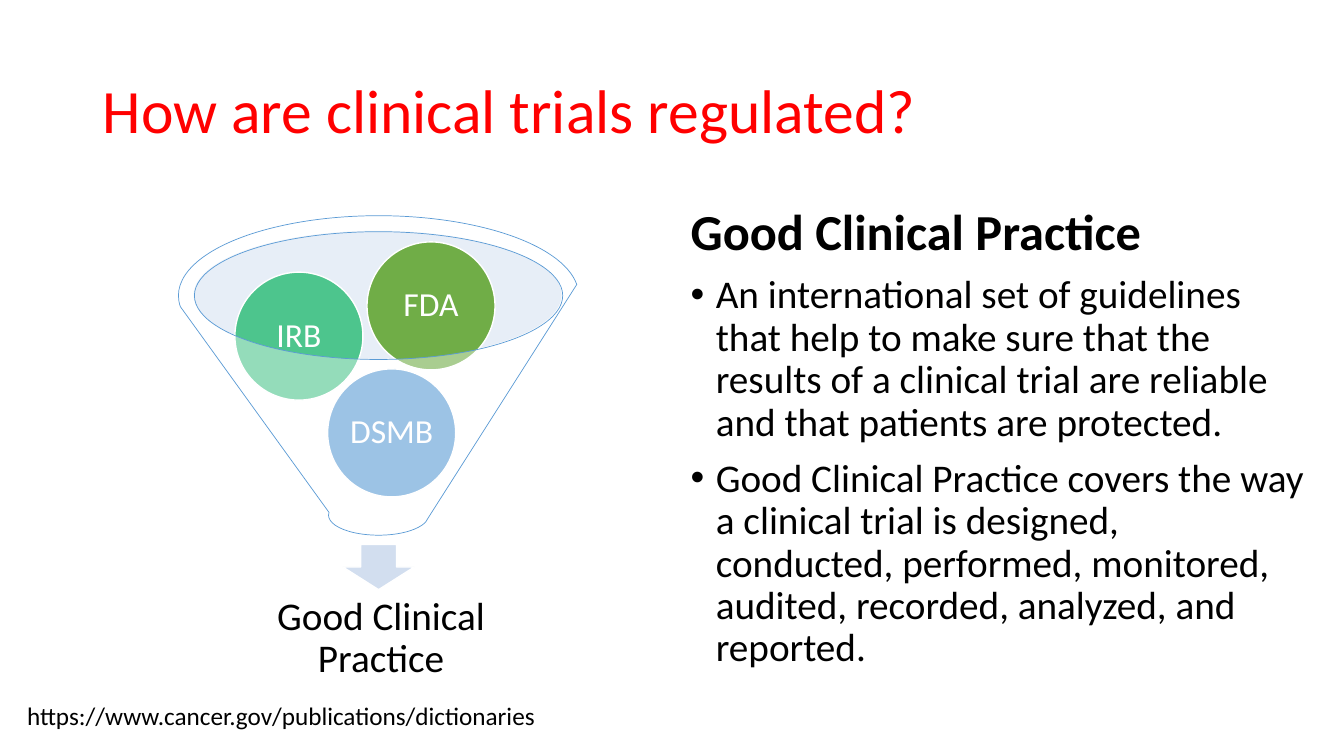
"""Build a slide on how clinical trials are regulated."""
from dataclasses import dataclass

from lxml import etree
from pptx import Presentation
from pptx.dml.color import RGBColor
from pptx.enum.shapes import MSO_SHAPE
from pptx.enum.text import MSO_ANCHOR, MSO_AUTO_SIZE, PP_ALIGN
from pptx.oxml.ns import qn
from pptx.util import Inches, Pt

ELLIPSE, FUNNEL, DOWN_ARROW = MSO_SHAPE.OVAL, MSO_SHAPE.FUNNEL, MSO_SHAPE.DOWN_ARROW
LEFT, CENTER, MIDDLE = PP_ALIGN.LEFT, PP_ALIGN.CENTER, MSO_ANCHOR.MIDDLE
NO_AUTOFIT = MSO_AUTO_SIZE.NONE


@dataclass(frozen=True)
class Theme:
    font: str = "Calibri"
    title: str = "FF0000"
    text: str = "000000"
    white: str = "FFFFFF"
    blue: str = "5B9BD5"
    teal: str = "4DC58D"
    green: str = "70AD47"
    rim: str = "C4D5EB"
    arrow: str = "D2DEEF"
    title_size: int = 44
    heading_size: int = 36
    body_size: int = 28
    circle_size: int = 24
    source_size: int = 18


theme = Theme()


def add_run(paragraph, text, size, color, bold=False):
    run = paragraph.add_run()
    run.text = text
    run.font.name = theme.font
    run.font.size = Pt(size)
    run.font.bold = bold
    run.font.color.rgb = RGBColor.from_string(color)


def add_figure(preset, box, fill, line=None, line_width=1, opacity=100):
    shape = slide.shapes.add_shape(preset, *map(Inches, box))
    shape.shadow.inherit = False
    shape.fill.solid()
    shape.fill.fore_color.rgb = RGBColor.from_string(fill)
    if opacity < 100:
        color = shape.fill._xPr.find(qn("a:solidFill"))[0]
        etree.SubElement(color, qn("a:alpha")).set("val", str(opacity * 1000))
    if line:
        shape.line.color.rgb = RGBColor.from_string(line)
        shape.line.width = Pt(line_width)
    else:
        shape.line.fill.background()
    return shape


presentation = Presentation()
presentation.slide_width = Inches(13.33)
presentation.slide_height = Inches(7.5)
slide = presentation.slides.add_slide(presentation.slide_layouts[1])

title, body = slide.shapes.title, slide.placeholders[1]
for placeholder, box in ((title, (0.92, 0.4, 11.5, 1.45)), (body, (6.75, 2, 6.29, 4.76))):
    placeholder.left, placeholder.top, placeholder.width, placeholder.height = map(Inches, box)
    placeholder.text_frame.auto_size = NO_AUTOFIT

title.text_frame.vertical_anchor = MIDDLE
paragraph = title.text_frame.paragraphs[0]
paragraph.alignment = LEFT
paragraph.line_spacing = 0.9
add_run(paragraph, "How are clinical trials regulated?", theme.title_size, theme.title)

practice_points = (
    ("Good Clinical Practice", False),
    ("An international set of guidelines that help to make sure that the results "
     "of a clinical trial are reliable and that patients are protected.", True),
    ("Good Clinical Practice covers the way a clinical trial is designed, conducted, "
     "performed, monitored, audited, recorded, analyzed, and reported.", True),
)
for index, (text, bulleted) in enumerate(practice_points):
    paragraph = body.text_frame.add_paragraph() if index else body.text_frame.paragraphs[0]
    paragraph.line_spacing = 0.9
    paragraph.space_before = Pt(10)
    indent = Inches(0.25) if bulleted else 0
    properties = paragraph._p.get_or_add_pPr()
    properties.set("marL", str(indent))
    properties.set("indent", str(-indent))
    if bulleted:
        etree.SubElement(properties, qn("a:buFont")).set("typeface", "Arial")
        etree.SubElement(properties, qn("a:buChar")).set("char", "•")
    else:
        etree.SubElement(properties, qn("a:buNone"))
    size = theme.body_size if bulleted else theme.heading_size
    add_run(paragraph, text, size, theme.text, bold=not bulleted)

add_figure(ELLIPSE, (1.92, 2.29, 3.65, 1.27), theme.rim, opacity=40)
add_figure(DOWN_ARROW, (3.4, 5.4, 0.71, 0.45), theme.arrow, theme.white)

circle_diameter = 1.27
for label, left, top, color in (
    ("DSMB", 3.25, 3.66, theme.blue),
    ("IRB", 2.33, 2.7, theme.teal),
    ("FDA", 3.64, 2.4, theme.green),
):
    circle = add_figure(ELLIPSE, (left, top, circle_diameter, circle_diameter), color, theme.white)
    frame = circle.text_frame
    frame.margin_left = frame.margin_right = frame.margin_top = frame.margin_bottom = Inches(0.03)
    frame.word_wrap = False
    frame.vertical_anchor = MIDDLE
    paragraph = frame.paragraphs[0]
    paragraph.alignment = CENTER
    paragraph.line_spacing = 0.9
    add_run(paragraph, label, theme.circle_size, theme.white)

add_figure(FUNNEL, (1.77, 2.14, 3.97, 3.17), theme.white, theme.blue, 0.5, opacity=40)

outcome = slide.shapes.add_textbox(*map(Inches, (2.08, 5.91, 3.4, 0.85))).text_frame
outcome.word_wrap = True
outcome.vertical_anchor = MIDDLE
outcome.margin_left = outcome.margin_right = Inches(0.22)
outcome.margin_top = outcome.margin_bottom = Inches(0.22)
paragraph = outcome.paragraphs[0]
paragraph.alignment = CENTER
paragraph.line_spacing = 0.9
add_run(paragraph, "Good Clinical Practice", theme.body_size, theme.text)

source = slide.shapes.add_textbox(*map(Inches, (0.17, 6.9, 6.67, 0.4))).text_frame
source.word_wrap = True
add_run(source.paragraphs[0], "https://www.cancer.gov/publications/dictionaries",
        theme.source_size, theme.text)

presentation.save("out.pptx")
